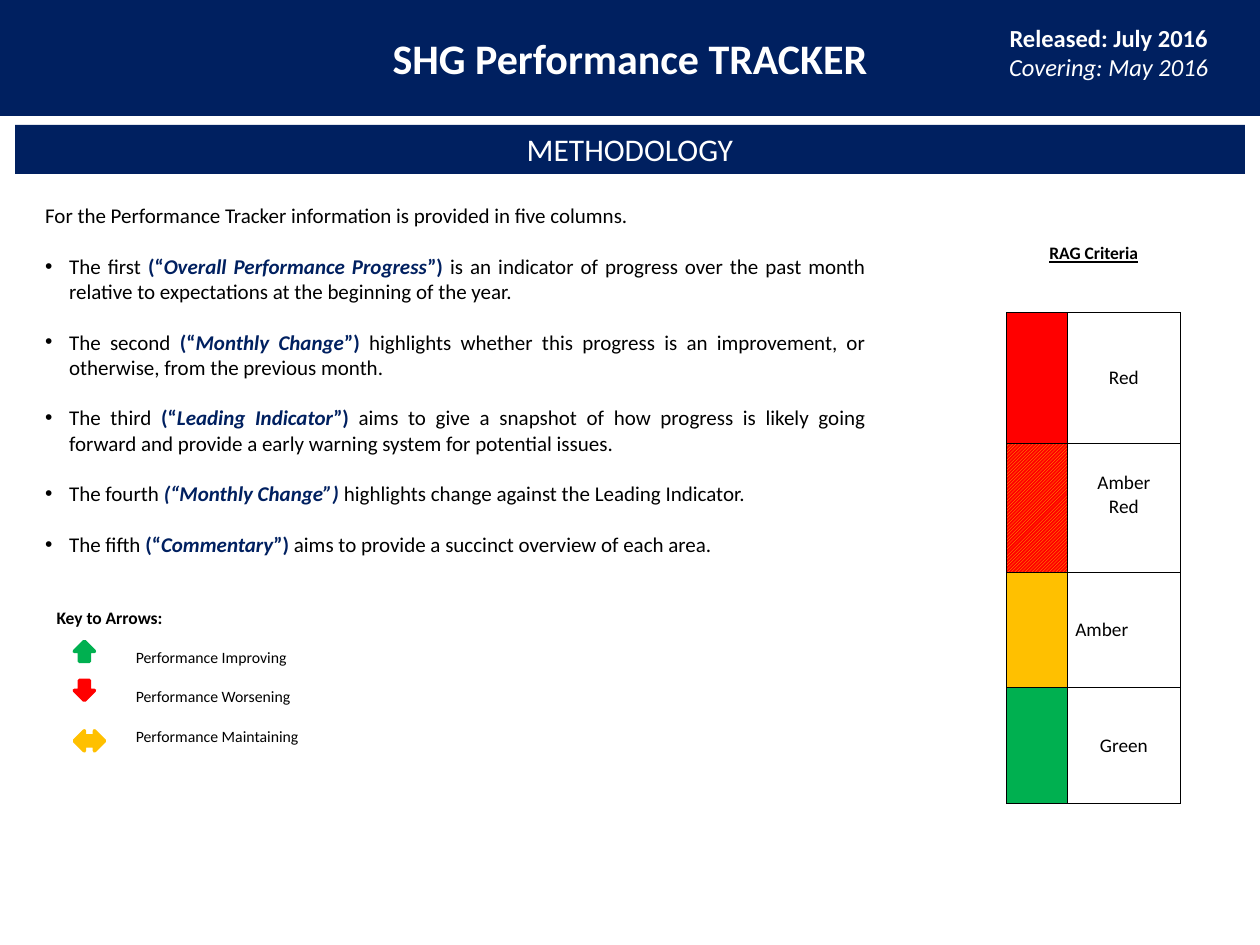
from lxml.etree import SubElement
from pptx import Presentation
from pptx.dml.color import RGBColor
from pptx.enum.dml import MSO_PATTERN
from pptx.enum.shapes import MSO_SHAPE as Shape
from pptx.enum.text import MSO_ANCHOR as Anchor, PP_ALIGN as Align
from pptx.oxml import parse_xml
from pptx.oxml.ns import nsdecls, qn
from pptx.util import Inches, Pt

THEME = {
    "font": "Calibri",
    "navy": "002060", "white": "FFFFFF", "black": "000000",
    "red": "FF0000", "amber": "FFC000", "green": "00B050",
    "title": 24, "section": 18, "date": 14, "body": 12,
    "rating": 11, "heading": 10, "key": 9,
}

BANNERS = [
    ("SHG Performance TRACKER", "title", True, (0, 0, 10, 0.92)),
    ("METHODOLOGY", "section", False, (0.12, 0.99, 9.76, 0.39)),
]
DATES = [("Released: July 2016", {"bold": True}), ("Covering: May 2016", {"italic": True})]
INTRO = "For the Performance Tracker information is provided in five columns."
# Lead-in, column name, whether its brackets are italic too, explanation
COLUMNS = [
    ("The first ", "Overall Performance Progress", False,
     "is an indicator of progress over the past month relative to expectations "
     "at the beginning of the year."),
    ("The second ", "Monthly Change", False,
     "highlights whether this progress is an improvement, or otherwise, from the previous month."),
    ("The third ", "Leading Indicator", False,
     "aims to give a snapshot of how progress is likely going forward and provide "
     "a early warning system for potential issues."),
    ("The fourth ", "Monthly Change", True, "highlights change against the Leading Indicator."),
    ("The fifth ", "Commentary", False, "aims to provide a succinct overview of each area."),
]
KEY_HEADING = "Key to Arrows:"
# Label, label top, arrow, arrow top, arrow width, colour
ARROWS = [
    ("Performance Improving", 5.09, Shape.UP_ARROW, 5.09, 0.16, "green"),
    ("Performance Worsening", 5.40, Shape.DOWN_ARROW, 5.40, 0.16, "red"),
    ("Performance Maintaining", 5.72, Shape.LEFT_RIGHT_ARROW, 5.80, 0.24, "amber"),
]
RAG_HEADING = "RAG Criteria"
# Lines, colours (two make a hatch), row height, right inset, bottom inset
RATINGS = [
    (["Red"], ["red"], 1.04, 0, 0),
    (["Amber", "Red"], ["red", "amber"], 1.02, 0, 0.2),
    (["Amber"], ["amber"], 0.92, 0.35, 0),
    (["Green"], ["green"], 0.92, 0, 0),
]
RAG_LEFT, RAG_TOP, RAG_HEADING_HEIGHT = 7.99, 1.55, 0.93
RAG_WIDTHS = [0.48, 0.9]


def color(name):
    return RGBColor.from_string(THEME[name])


def add_span(para, text, size, ink="black", bold=False, italic=False, underline=False):
    span = para.add_run()
    span.text = text
    font = span.font
    font.name, font.size = THEME["font"], Pt(THEME[size])
    font.bold, font.italic, font.underline = bold, italic, underline
    font.color.rgb = color(ink)


def next_para(frame, index, align):
    para = frame.add_paragraph() if index else frame.paragraphs[0]
    para.alignment = align
    return para


def add_text_frame(slide, *place):
    frame = slide.shapes.add_textbox(*map(Inches, place)).text_frame
    frame.word_wrap = True
    return frame


def add_solid(slide, kind, fill, *place):
    shape = slide.shapes.add_shape(kind, *map(Inches, place))
    shape.shadow.inherit = False
    shape.fill.solid()
    shape.fill.fore_color.rgb = color(fill)
    shape.line.fill.background()
    return shape


def add_banners(slide):
    for text, size, bold, place in BANNERS:
        frame = add_solid(slide, Shape.RECTANGLE, "navy", *place).text_frame
        frame.vertical_anchor = Anchor.MIDDLE
        add_span(next_para(frame, 0, Align.CENTER), text, size, "white", bold)
    frame = add_text_frame(slide, 7.6, 0.13, 2.4, 0.57)
    for index, (text, style) in enumerate(DATES):
        add_span(next_para(frame, index, Align.CENTER), text, "date", "white", **style)


def add_bullet(para):
    props = para._p.get_or_add_pPr()
    props.set("marL", str(Inches(0.19)))
    props.set("indent", str(-Inches(0.19)))
    SubElement(props, qn("a:buFont"), typeface="Arial")
    SubElement(props, qn("a:buChar"), char="•")


def add_method(slide):
    frame = add_text_frame(slide, 0.26, 1.56, 6.71, 3.13)
    add_span(next_para(frame, 0, Align.JUSTIFY), INTRO, "body")
    for index, (lead, name, slanted, rest) in enumerate(COLUMNS, 1):
        para = next_para(frame, index, Align.JUSTIFY)
        para.space_before = Pt(14.5)
        add_bullet(para)
        add_span(para, lead, "body")
        for text, italic in (("(“", slanted), (name, True), ("”) ", slanted)):
            add_span(para, text, "body", "navy", True, italic)
        add_span(para, rest, "body")


def add_key(slide):
    frame = add_text_frame(slide, 0.35, 4.77, 3.31, 0.27)
    add_span(frame.paragraphs[0], KEY_HEADING, "heading", bold=True)
    for label, label_top, kind, top, width, fill in ARROWS:
        arrow = add_solid(slide, kind, fill, 0.59, top, width, 0.16)
        arrow.line.color.rgb = color(fill)
        arrow.line.width = Pt(2)
        frame = add_text_frame(slide, 0.98, label_top, 2.13, 0.25)
        add_span(frame.paragraphs[0], label, "key")


def set_borders(cell, **widths):
    """Draw black edges, given as L, R, T, B with widths in points."""
    props = cell._tc.get_or_add_tcPr()
    for index, edge in enumerate(edge for edge in "LRTB" if edge in widths):
        props.insert(index, parse_xml(
            f'<a:ln{edge} {nsdecls("a")} w="{Pt(widths[edge])}"><a:solidFill>'
            f'<a:srgbClr val="{THEME["black"]}"/></a:solidFill></a:ln{edge}>'))


def fill_cell(cell, colors):
    if len(colors) == 2:
        cell.fill.patterned()
        cell.fill.pattern = MSO_PATTERN.DARK_UPWARD_DIAGONAL
        cell.fill.back_color.rgb, cell.fill.fore_color.rgb = map(color, colors)
    else:
        cell.fill.solid()
        cell.fill.fore_color.rgb = color(colors[0])


def write_cell(cell, lines, size, right=0, bottom=0, **style):
    cell.vertical_anchor = Anchor.MIDDLE
    cell.margin_left = cell.margin_top = 0
    cell.margin_right, cell.margin_bottom = Inches(right), Inches(bottom)
    for index, line in enumerate(lines):
        add_span(next_para(cell.text_frame, index, Align.CENTER), line, size, **style)


def add_rag_table(slide):
    heights = [RAG_HEADING_HEIGHT] + [rating[2] for rating in RATINGS]
    place = (RAG_LEFT, RAG_TOP, sum(RAG_WIDTHS), sum(heights))
    table = slide.shapes.add_table(len(heights), 2, *map(Inches, place)).table
    table.first_row = table.horz_banding = False
    for column, width in zip(table.columns, RAG_WIDTHS):
        column.width = Inches(width)
    for row, height in zip(table.rows, heights):
        row.height = Inches(height)

    heading = table.cell(0, 0)
    heading.merge(table.cell(0, 1))
    write_cell(heading, [RAG_HEADING], "heading", bold=True, underline=True)
    for cell in table.rows[0].cells:
        cell.fill.background()
        set_borders(cell, B=0.5)
    for index, (lines, colors, _, right, bottom) in enumerate(RATINGS, 1):
        swatch, label = table.rows[index].cells
        fill_cell(swatch, colors)
        label.fill.background()
        write_cell(label, lines, "rating", right, bottom)
        for cell in (swatch, label):
            set_borders(cell, L=0.5, R=0.5, T=0.5, B=1 if index == len(RATINGS) else 0.5)


def main():
    deck = Presentation()
    deck.slide_width, deck.slide_height = Inches(10), Inches(7.5)
    slide = deck.slides.add_slide(deck.slide_layouts[6])
    add_banners(slide)
    add_method(slide)
    add_rag_table(slide)
    add_key(slide)
    deck.save("out.pptx")


if __name__ == "__main__":
    main()
